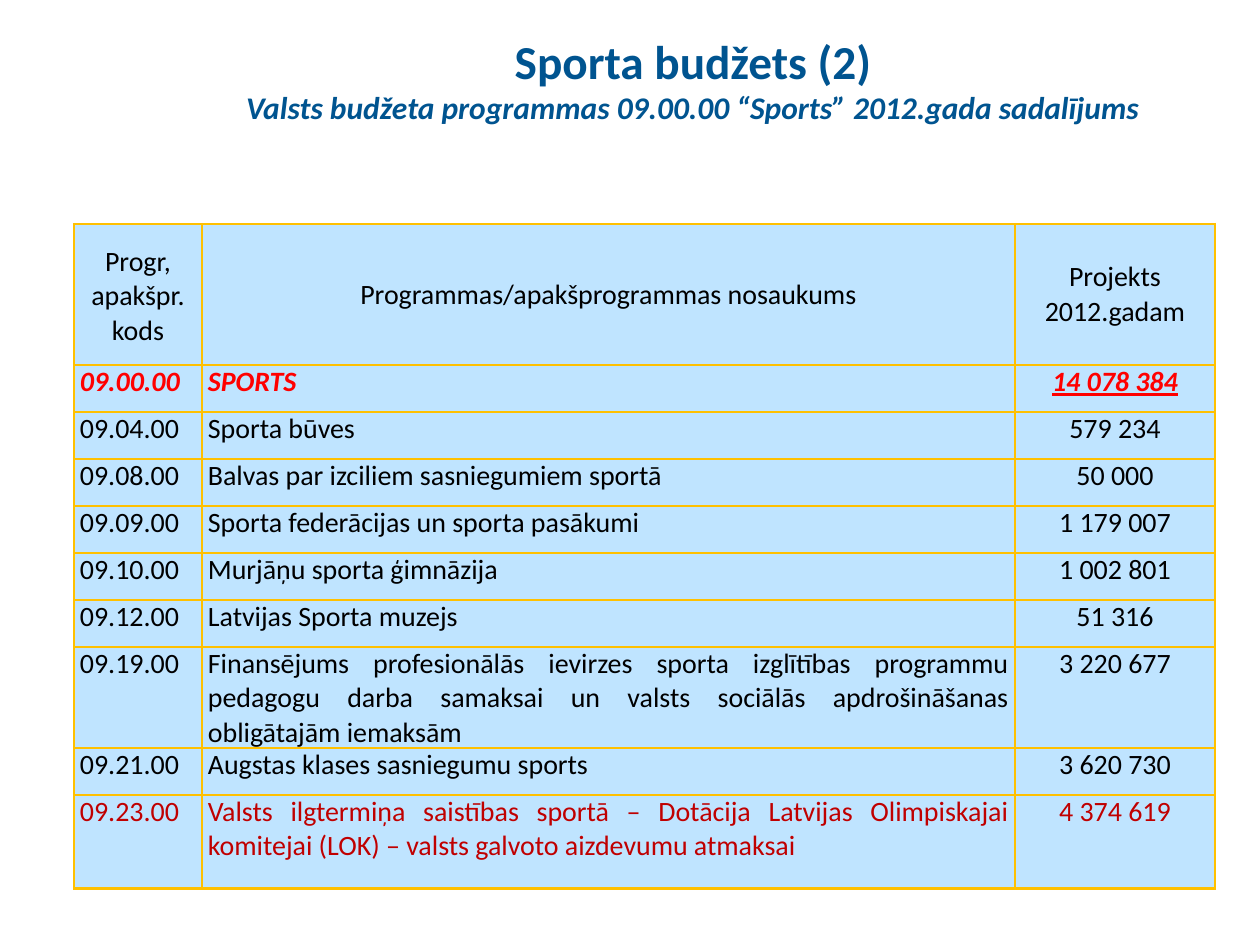
from lxml.etree import SubElement as Sub
from pptx import Presentation
from pptx.dml.color import RGBColor
from pptx.enum.text import MSO_ANCHOR as Anchor, PP_ALIGN as Align
from pptx.oxml.ns import qn
from pptx.util import Pt

TITLE = [("Sporta budžets (2)", 27, False),
         ("Valsts budžeta programmas 09.00.00 “Sports” 2012.gada sadalījums", 18, True)]
ROWS = [
    ("Progr,\napakšpr.\nkods", "Programmas/apakšprogrammas nosaukums", "Projekts 2012.gadam"),
    ("09.00.00", "SPORTS", "14 078 384"),
    ("09.04.00", "Sporta būves", "579 234"),
    ("09.08.00", "Balvas par izciliem sasniegumiem sportā", "50 000"),
    ("09.09.00", "Sporta federācijas un sporta pasākumi", "1 179 007"),
    ("09.10.00", "Murjāņu sporta ģimnāzija", "1 002 801"),
    ("09.12.00", "Latvijas Sporta muzejs", "51 316"),
    ("09.19.00", "Finansējums profesionālās ievirzes sporta izglītības programmu pedagogu "
     "darba samaksai un valsts sociālās apdrošināšanas obligātajām iemaksām", "3 220 677"),
    ("09.21.00", "Augstas klases sasniegumu sports", "3 620 730"),
    ("09.23.00", "Valsts ilgtermiņa saistības sportā – Dotācija Latvijas Olimpiskajai "
     "komitejai (LOK) – valsts galvoto aizdevumu atmaksai", "4 374 619"),
]
COLS = [128, 813, 200]
HEAD, LINE, TALL = 141, 47, 94
TOTAL = 1
LONG = {7, 9}
INKS = {TOTAL: "FF0000", 9: "C00000"}
NAVY, BLACK, SKY, GOLD = "005490", "000000", "BFE4FF", "FFC000"


def px(n):
    return round(n * 914400 / 126)


def rgb(tone):
    return RGBColor.from_string(tone)


def style(para, size, tone, bold=False, slant=False, under=False):
    for run in para.runs:
        font = run.font
        font.name, font.size = "Calibri", Pt(size)
        font.bold, font.italic, font.underline = bold, slant, under
        font.color.rgb = rgb(tone)


def frame(cell):
    props = cell._tc.get_or_add_tcPr()
    for spot, side in enumerate(("a:lnL", "a:lnR", "a:lnT", "a:lnB")):
        line = props.makeelement(qn(side), {"w": str(Pt(1.5))})
        fill = Sub(line, qn("a:solidFill"))
        Sub(fill, qn("a:srgbClr"), val=GOLD)
        props.insert(spot, line)


def add_title(slide):
    box = slide.shapes.add_textbox(px(126), 0, px(1134), px(158))
    text = box.text_frame
    text.word_wrap = True
    text.vertical_anchor = Anchor.MIDDLE
    text.text = "\n".join(words for words, _, _ in TITLE)
    for para, (_, size, slant) in zip(text.paragraphs, TITLE):
        para.alignment = Align.CENTER
        style(para, size, NAVY, True, slant)


def fill_cell(cell, words, r, c):
    cell.margin_left = cell.margin_right = px(6)
    cell.margin_top = px(21) if r == c == 0 else 0
    cell.margin_bottom = 0
    cell.vertical_anchor = Anchor.MIDDLE if r == 0 and c else Anchor.TOP
    cell.fill.solid()
    cell.fill.fore_color.rgb = rgb(SKY)
    frame(cell)
    cell.text_frame.text = words
    if r == 0 or c == 2:
        align = Align.CENTER
    elif c == 1 and r in LONG:
        align = Align.JUSTIFY
    else:
        align = Align.LEFT
    main = r == TOTAL
    for para in cell.text_frame.paragraphs:
        para.alignment = align
        style(para, 16, INKS.get(r, BLACK), main, main, main and c == 2)


def add_budget(slide):
    highs = [HEAD] + [TALL if r in LONG else LINE for r in range(1, len(ROWS))]
    table = slide.shapes.add_table(len(ROWS), len(COLS), px(74), px(224),
                                   px(sum(COLS)), px(sum(highs))).table
    for col, wide in zip(table.columns, COLS):
        col.width = px(wide)
    for r, (row, high) in enumerate(zip(ROWS, highs)):
        table.rows[r].height = px(high)
        for c, words in enumerate(row):
            fill_cell(table.cell(r, c), words, r, c)


def main():
    deck = Presentation()
    deck.slide_width, deck.slide_height = px(1260), px(945)
    slide = deck.slides.add_slide(deck.slide_layouts[6])
    add_title(slide)
    add_budget(slide)
    deck.save("out.pptx")


if __name__ == "__main__":
    main()
